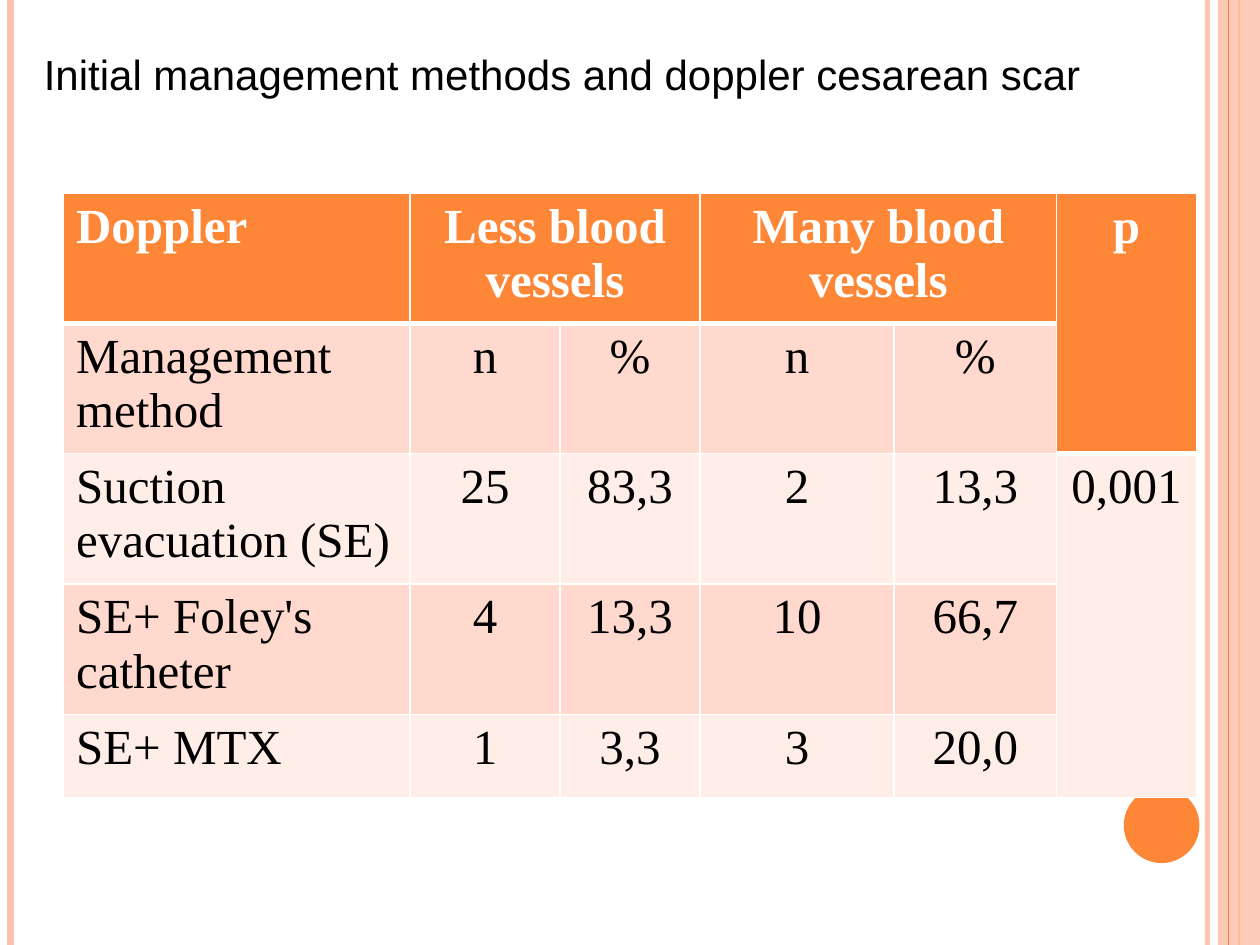
from lxml.etree import SubElement as Sub
from pptx import Presentation
from pptx.dml.color import RGBColor
from pptx.enum.shapes import MSO_CONNECTOR as Link, MSO_SHAPE as Shape
from pptx.enum.text import PP_ALIGN as Align
from pptx.oxml.ns import qn
from pptx.util import Pt

ORANGE = RGBColor(0xFE, 0x86, 0x37)
PEACH = RGBColor(0xFE, 0xC3, 0xAE)
ROSE = RGBColor(0xFF, 0xD9, 0xCE)
PALE = RGBColor(0xFF, 0xED, 0xE8)
WHITE = RGBColor(0xFF, 0xFF, 0xFF)
BLACK = RGBColor(0, 0, 0)

TITLE = "Initial management methods and doppler cesarean scar"
COLS = [198, 85.7, 80, 110.9, 92.9, 79.9]
ROW = 47.5
ROWS = [
    ["Doppler", "Less blood vessels", "", "Many blood vessels", "", "p"],
    ["Management method", "n", "%", "n", "%", ""],
    ["Suction evacuation (SE)", "25", "83,3", "2", "13,3", "0,001"],
    ["SE+ Foley's catheter", "4", "13,3", "10", "66,7", ""],
    ["SE+ MTX", "1", "3,3", "3", "20,0", ""],
]
MERGES = [(0, 1, 0, 2), (0, 3, 0, 4), (0, 5, 1, 5), (2, 5, 4, 5)]


def fade(item, part):
    """Make the first solid colour of a shape partly transparent."""
    tone = next(item._element.spPr.iter(qn("a:srgbClr")))
    Sub(tone, qn("a:alpha"), val=str(part * 1000))


def add_rule(slide, left, width, color):
    """Draw a vertical line over the full slide height."""
    rule = slide.shapes.add_connector(
        Link.STRAIGHT, Pt(left), Pt(0), Pt(left), Pt(540))
    rule.line.width = Pt(width)
    rule.line.color.rgb = color
    Sub(rule._element.spPr, qn("a:effectLst"))
    return rule


def add_block(slide, kind, box, color):
    """Draw a filled shape without outline."""
    block = slide.shapes.add_shape(kind, *map(Pt, box))
    block.shadow.inherit = False
    block.fill.solid()
    block.fill.fore_color.rgb = color
    block.line.fill.background()
    return block


def style(para, font, size, color, bold=False):
    """Format every run of a paragraph."""
    for run in para.runs:
        run.font.name = font
        run.font.size = Pt(size)
        run.font.color.rgb = color
        run.font.bold = bold


def add_title(slide):
    """Place the slide heading."""
    frame = slide.shapes.add_textbox(
        Pt(18), Pt(24), Pt(684), Pt(486)).text_frame
    frame.word_wrap = True
    frame.text = TITLE
    frame.paragraphs[0].space_before = Pt(6)
    style(frame.paragraphs[0], "Arial", 24, BLACK)


def set_edges(cell, base):
    """Give a cell white borders, with its own width at the bottom."""
    props = cell._tc.get_or_add_tcPr()
    widths = {"lnL": 1, "lnR": 1, "lnT": 1, "lnB": base}
    for spot, (tag, width) in enumerate(widths.items()):
        edge = props.makeelement(qn("a:" + tag), {"w": str(Pt(width))})
        fill = Sub(edge, qn("a:solidFill"))
        Sub(fill, qn("a:srgbClr"), val=str(WHITE))
        props.insert(spot, edge)


def fill_cell(cell, text, row, col):
    """Write and format one table cell."""
    head = row == 0 or (row == 1 and col == 5)
    if head:
        tint = ORANGE
    else:
        tint = ROSE if row % 2 and col < 5 else PALE
    cell.fill.solid()
    cell.fill.fore_color.rgb = tint
    set_edges(cell, 3 if head else 1)
    cell.text_frame.text = text
    para = cell.text_frame.paragraphs[0]
    para.alignment = Align.CENTER if col else Align.LEFT
    style(para, "Times New Roman", 28, WHITE if head else BLACK, head)


def add_grid(slide):
    """Build the table of management methods."""
    grid = slide.shapes.add_table(
        len(ROWS), len(COLS), Pt(36.3), Pt(110.3),
        Pt(sum(COLS)), Pt(ROW * len(ROWS))).table
    for col, width in zip(grid.columns, COLS):
        col.width = Pt(width)
    for r, texts in enumerate(ROWS):
        for c, text in enumerate(texts):
            fill_cell(grid.cell(r, c), text, r, c)
    for top, left, low, right in MERGES:
        grid.cell(top, left).merge(grid.cell(low, right))


def main():
    """Build and save the slide."""
    deck = Presentation()
    deck.slide_width, deck.slide_height = Pt(720), Pt(540)
    slide = deck.slides.add_slide(deck.slide_layouts[6])
    fade(add_rule(slide, 690, 3, PEACH), 93)
    add_rule(slide, 6, 4.5, PEACH)
    add_rule(slide, 708, 1.5, ORANGE)
    fade(add_block(slide, Shape.RECTANGLE, (696, 0, 24, 540), PEACH), 87)
    add_rule(slide, 702, 0.75, ORANGE)
    add_block(slide, Shape.OVAL, (642.2, 450, 43.2, 43.2), ORANGE)
    add_title(slide)
    add_grid(slide)
    deck.save("out.pptx")


if __name__ == "__main__":
    main()
